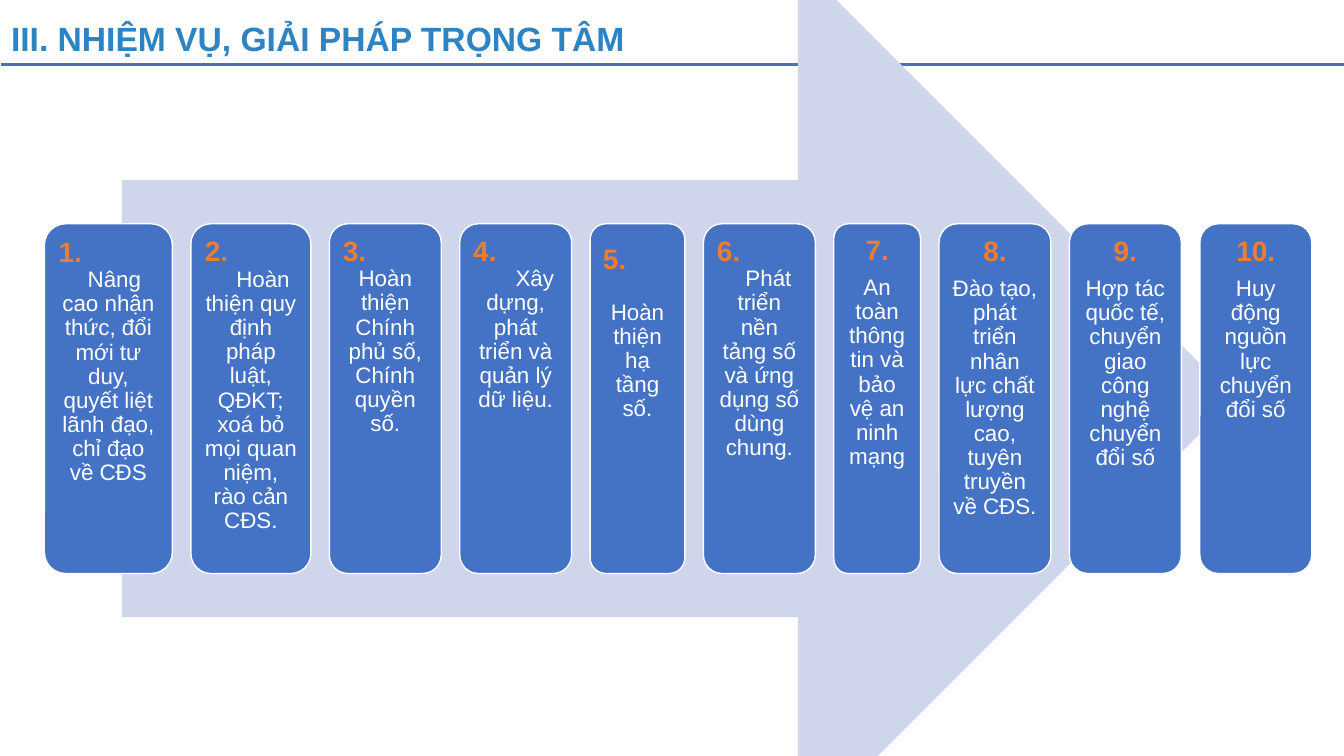
from dataclasses import dataclass

from lxml.etree import SubElement
from pptx import Presentation
from pptx.dml.color import RGBColor as Color
from pptx.enum.shapes import MSO_CONNECTOR as Connector, MSO_SHAPE as Preset
from pptx.enum.text import MSO_ANCHOR as Anchor, PP_ALIGN as Align
from pptx.oxml.ns import qn
from pptx.util import Pt

PX = 9144  # EMU in one px, 100 px to the inch


@dataclass(frozen=True)
class Theme:
    font: str = "Arial"
    title: Color = Color.from_string("2E83C3")
    card: Color = Color.from_string("4472C4")
    arrow: Color = Color.from_string("CFD5EA")
    number: Color = Color.from_string("ED7D31")
    white: Color = Color.from_string("FFFFFF")
    title_size: int = 24
    number_size: int = 20
    body_size: int = 16
    line_spacing: float = 0.9


THEME = Theme()


@dataclass(frozen=True)
class Task:
    text: str
    width: int = 111
    number_align: Align = Align.CENTER
    first_indent: int = 0  # px, first line of the text
    number_drop: int = 0  # px, number below its usual place
    number_gap: int = 7  # pt, between number and text


LEFT = {"number_align": Align.LEFT, "number_gap": 0}
TASKS = [
    Task("Nâng cao nhận thức, đổi mới tư duy, quyết liệt lãnh đạo, chỉ đạo về CĐS",
         width=127, first_indent=12, **LEFT),
    Task("Hoàn thiện quy định pháp luật, QĐKT; xoá bỏ mọi quan niệm, rào cản CĐS.",
         width=119, first_indent=24, **LEFT),
    Task("Hoàn thiện Chính phủ số, Chính quyền số.", **LEFT),
    Task("Xây dựng, phát triển và quản lý dữ liệu.", first_indent=38, **LEFT),
    Task("Hoàn thiện hạ tầng số.", width=94, number_align=Align.LEFT,
         number_drop=9, number_gap=18),
    Task("Phát triển nền tảng số và ứng dụng số dùng chung.", first_indent=18, **LEFT),
    Task("An toàn thông tin và bảo vệ an ninh mạng", width=86),
    Task("Đào tạo, phát triển nhân lực chất lượng cao, tuyên truyền về CĐS."),
    Task("Hợp tác quốc tế, chuyển giao công nghệ chuyển đổi số"),
    Task("Huy động nguồn lực chuyển đổi số"),
]


def set_all(target, values):
    for name, value in values.items():
        setattr(target, name, value)


def emu(*lengths):
    return [round(length * PX) for length in lengths]


def write(paragraph, text, size, color, bold=False, align=Align.LEFT, after=0):
    paragraph.text = text
    set_all(paragraph, {"alignment": align, "line_spacing": THEME.line_spacing,
                        "space_before": Pt(0), "space_after": Pt(after)})
    font = paragraph.runs[0].font
    set_all(font, {"name": THEME.font, "size": Pt(size), "bold": bold})
    font.color.rgb = color


def add_preset(slide, preset, box, fill):
    shape = slide.shapes.add_shape(preset, *emu(*box))
    shape.shadow.inherit = False
    shape.fill.solid()
    shape.fill.fore_color.rgb = fill
    return shape


def add_header(slide, box):
    left, top, width, height = box
    # Title
    title = slide.shapes.title
    set_all(title, dict(zip(("left", "top", "width", "height"), emu(*box))))
    set_all(title.text_frame, {"vertical_anchor": Anchor.MIDDLE, "word_wrap": True})
    write(title.text_frame.paragraphs[0], "III. NHIỆM VỤ, GIẢI PHÁP TRỌNG TÂM",
          THEME.title_size, THEME.title, bold=True)
    # Rule under the title
    rule_top = top + height + 1
    rule = slide.shapes.add_connector(
        Connector.STRAIGHT, *emu(left, rule_top, left + width, rule_top))
    rule.line.color.rgb = THEME.card
    rule.line.width = Pt(1.5)
    SubElement(rule._element.spPr, qn("a:effectLst"))


def add_card(slide, box, number, task):
    card = add_preset(slide, Preset.ROUNDED_RECTANGLE, box, THEME.card)
    card.line.color.rgb = THEME.white
    card.line.width = Pt(1)
    frame = card.text_frame
    side, top = emu(8, 8 + task.number_drop)
    set_all(frame, {"word_wrap": True, "vertical_anchor": Anchor.TOP,
                    "margin_left": side, "margin_right": side,
                    "margin_top": top, "margin_bottom": side})
    write(frame.paragraphs[0], f"{number}.", THEME.number_size, THEME.number,
          bold=True, align=task.number_align, after=task.number_gap)
    body = frame.add_paragraph()
    write(body, task.text, THEME.body_size, THEME.white, align=Align.CENTER)
    if task.first_indent:
        properties = body._p.get_or_add_pPr()
        properties.set("marL", "0")
        properties.set("indent", str(task.first_indent * PX))


def add_card_row(slide, box):
    left, top, width, height = box
    gap = (width - sum(task.width for task in TASKS)) / (len(TASKS) - 1)
    for number, task in enumerate(TASKS, start=1):
        add_card(slide, (left, top, task.width, height), number, task)
        left += task.width + gap


def add_process(slide, box):
    left, top, width, height = box
    # Arrow behind the cards
    arrow = add_preset(slide, Preset.RIGHT_ARROW,
                       (left + 77, top, width - 153, height), THEME.arrow)
    arrow.line.fill.background()
    # Cards, centred on the arrow
    card_height = 347
    add_card_row(slide, (left, top + (height - card_height) / 2, width, card_height))


def main():
    presentation = Presentation()
    set_all(presentation, dict(zip(("slide_width", "slide_height"), emu(1333, 750))))
    slide = presentation.slides.add_slide(presentation.slide_layouts.get_by_name("Title Only"))
    add_header(slide, (1, 17, 1332, 46))
    add_process(slide, (44, -38, 1257, 867))
    presentation.save("out.pptx")


if __name__ == "__main__":
    main()
